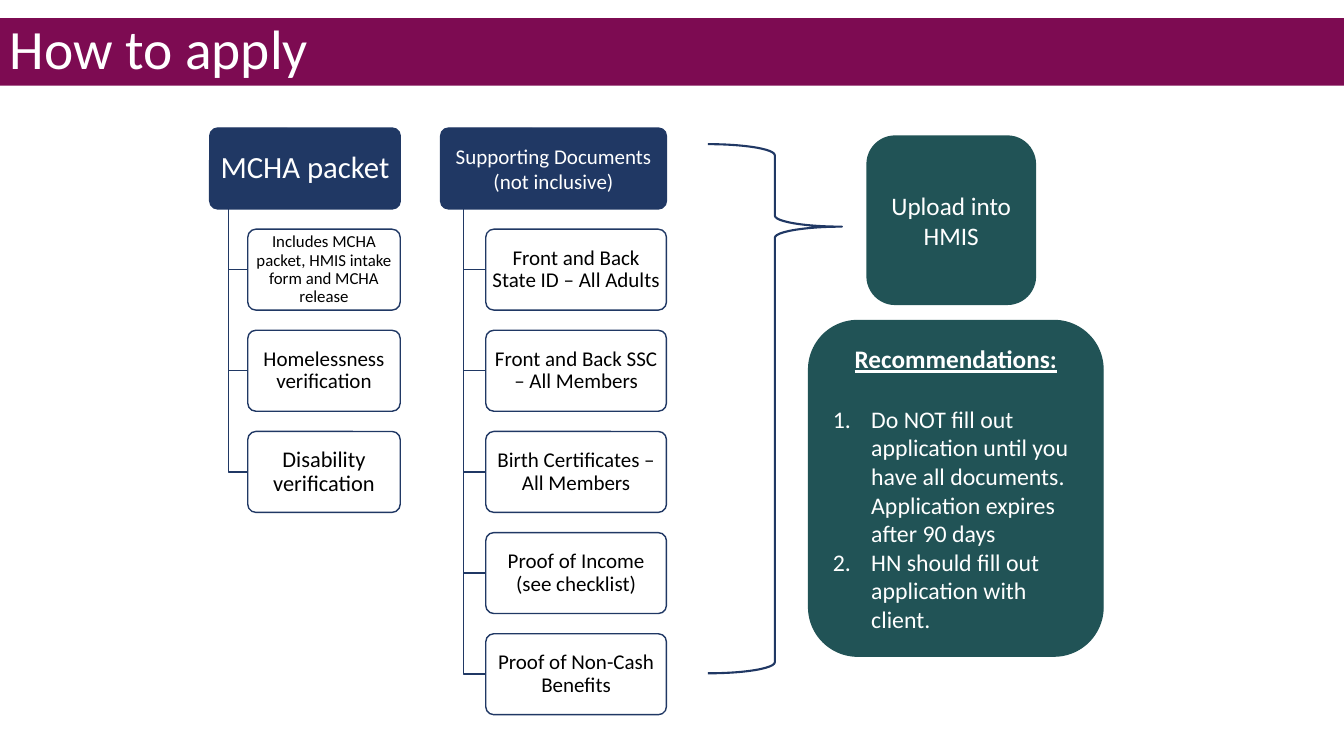
from pptx import Presentation
from pptx.dml.color import RGBColor
from pptx.enum.shapes import MSO_SHAPE as SHAPE
from pptx.enum.text import MSO_ANCHOR as ANCHOR, PP_ALIGN as ALIGN
from pptx.util import Inches, Pt
from pptx.oxml.ns import qn
from lxml.etree import SubElement

TITLE = "How to apply"
COLUMNS = [
    dict(left=2.08, width=1.89, head=["MCHA packet"], size=22, spacing=0.9, items=[
        ("Includes MCHA packet, HMIS intake form and MCHA release", 12),
        ("Homelessness verification", 15),
        ("Disability verification", 16)]),
    dict(left=4.37, width=2.24, head=["Supporting Documents", "(not inclusive)"],
         size=15, spacing=1.0, items=[
        ("Front and Back State ID – All Adults", 15),
        ("Front and Back SSC – All Members", 15),
        ("Birth Certificates – All Members", 15),
        ("Proof of Income (see checklist)", 15),
        ("Proof of Non-Cash Benefits", 15)]),
]
UPLOAD = "Upload into HMIS"
ADVICE_HEAD = "Recommendations:"
ADVICE = [
    "Do NOT fill out application until you have all documents. Application expires after 90 days",
    "HN should fill out application with client.",
]

PLUM = RGBColor(0x7D, 0x0B, 0x52)
NAVY = RGBColor(0x20, 0x38, 0x64)
TEAL = RGBColor(0x21, 0x53, 0x56)
WHITE = RGBColor(0xFF, 0xFF, 0xFF)
BLACK = RGBColor(0, 0, 0)

WIDTH, HEIGHT = 13.33, 7.5
TOP, BOTTOM, ROWS, GAP = 1.27, 7.09, 6, 0.25
BOX_H = (BOTTOM - TOP) / (ROWS + GAP * (ROWS - 1))
PITCH = BOX_H * (1 + GAP)
STEM, INDENT = 0.1, 0.2

prs = Presentation()
prs.slide_width, prs.slide_height = Inches(WIDTH), Inches(HEIGHT)
slide = prs.slides.add_slide(prs.slide_layouts[6])


def style(s, fill=None, line=None, weight=1):
    s.shadow.inherit = False
    if fill is None:
        s.fill.background()
    else:
        s.fill.solid()
        s.fill.fore_color.rgb = fill
    if line is None:
        s.line.fill.background()
    else:
        s.line.color.rgb = line
        s.line.width = Pt(weight)


def add_shape(kind, left, top, width, height, adj=(), **look):
    s = slide.shapes.add_shape(kind, Inches(left), Inches(top), Inches(width), Inches(height))
    for i, value in enumerate(adj):
        s.adjustments[i] = value
    style(s, **look)
    return s


def write(s, lines, size=15, color=WHITE, align=ALIGN.CENTER, spacing=1.0, inset=(0.1, 0.05)):
    tf = s.text_frame
    tf.word_wrap = True
    tf.vertical_anchor = ANCHOR.MIDDLE
    tf.margin_left = tf.margin_right = Inches(inset[0])
    tf.margin_top = tf.margin_bottom = Inches(inset[1])
    for i, text in enumerate(lines):
        p = tf.paragraphs[0] if i == 0 else tf.add_paragraph()
        p.alignment = align
        p.line_spacing = spacing
        r = p.add_run()
        r.text = text
        r.font.name = "Calibri"
        r.font.size = Pt(size)
        r.font.color.rgb = color
    return tf.paragraphs


def number(p):
    p.alignment = ALIGN.LEFT
    pPr = p._p.get_or_add_pPr()
    pPr.set("marL", str(Inches(0.38)))
    pPr.set("indent", str(-Inches(0.38)))
    SubElement(pPr, qn("a:buFont")).set("typeface", "+mj-lt")
    SubElement(pPr, qn("a:buAutoNum")).set("type", "arabicPeriod")


def add_elbow(x, top, right, bottom):
    points = [(Inches(x), Inches(bottom)), (Inches(right), Inches(bottom))]
    fb = slide.shapes.build_freeform(Inches(x), Inches(top))
    fb.add_line_segments(points, close=False)
    style(fb.convert_to_shape(), line=NAVY)


def add_column(left, width, head, size, spacing, items):
    s = add_shape(SHAPE.ROUNDED_RECTANGLE, left, TOP, width, BOX_H, [0.1], fill=NAVY, line=NAVY)
    write(s, head, size=size, spacing=spacing, inset=(0.05, 0.03))
    child = left + INDENT * width
    for row, (text, points) in enumerate(items, 1):
        top = TOP + row * PITCH
        add_elbow(left + STEM * width, TOP + BOX_H, child, top + BOX_H / 2)
        s = add_shape(SHAPE.ROUNDED_RECTANGLE, child, top, width * (1 - INDENT), BOX_H,
                      [0.1], fill=WHITE, line=NAVY)
        write(s, [text], size=points, color=BLACK, spacing=0.9, inset=(0.03, 0.02))


def main():
    banner = add_shape(SHAPE.RECTANGLE, 0, 0.18, WIDTH, 0.67, fill=PLUM)
    write(banner, [TITLE], size=39.6, align=ALIGN.LEFT, spacing=0.9)

    for column in COLUMNS:
        add_column(**column)

    add_shape(SHAPE.RIGHT_BRACE, 7.02, 1.43, 1.33, 5.25, [0.083, 0.156], line=NAVY, weight=1.5)

    upload = add_shape(SHAPE.ROUNDED_RECTANGLE, 8.6, 1.35, 1.67, 1.67, fill=TEAL, line=TEAL)
    write(upload, [UPLOAD], size=18)

    advice = add_shape(SHAPE.ROUNDED_RECTANGLE, 8.02, 3.18, 2.92, 3.33, fill=TEAL, line=TEAL)
    head, *steps = write(advice, [ADVICE_HEAD, *ADVICE], size=17)
    head.space_after = Pt(22)
    font = head.runs[0].font
    font.size, font.bold, font.underline = Pt(18), True, True
    for p in steps:
        number(p)

    prs.save("out.pptx")


if __name__ == "__main__":
    main()
